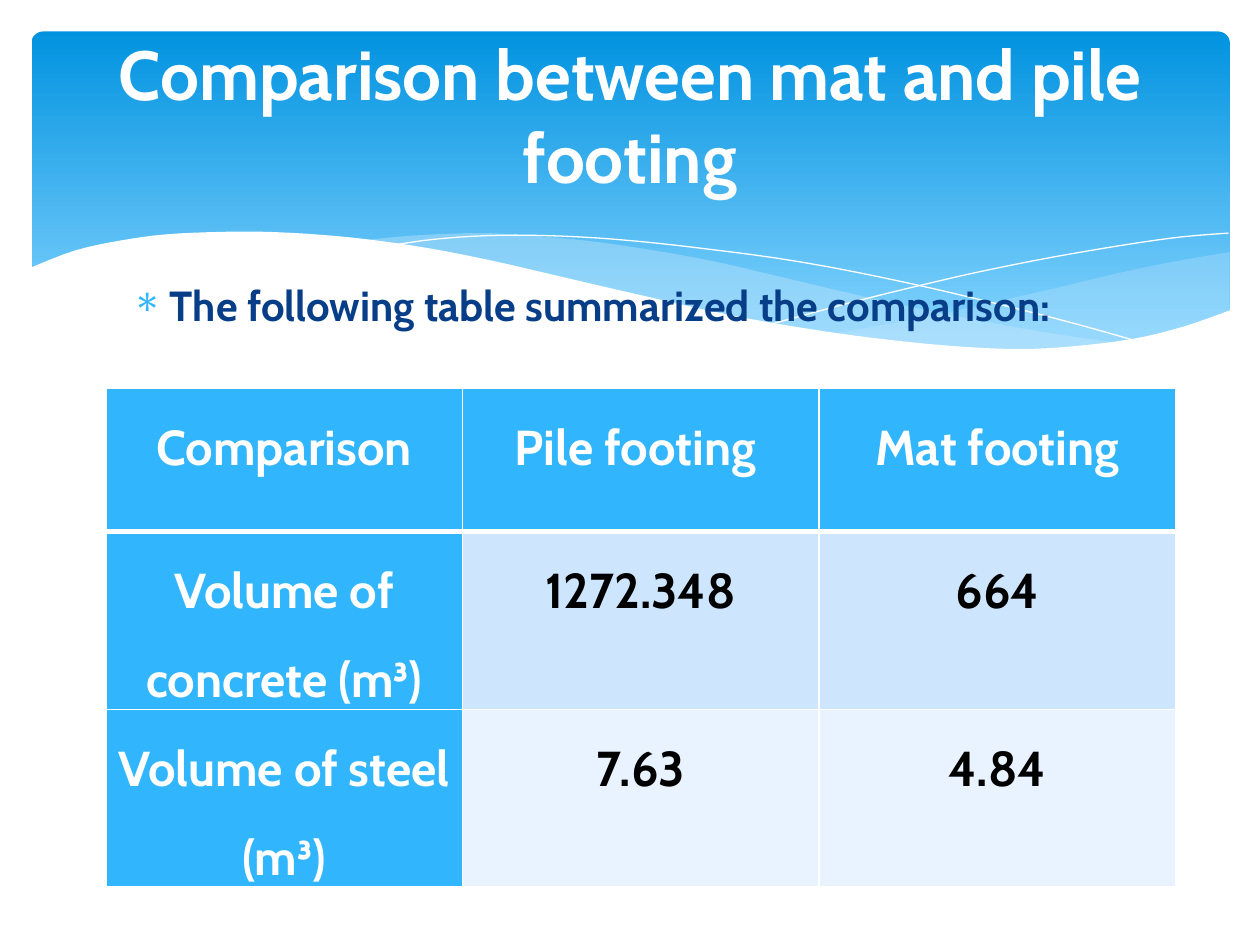
from dataclasses import dataclass

from lxml import etree
from pptx import Presentation
from pptx.dml.color import RGBColor
from pptx.enum.shapes import MSO_SHAPE
from pptx.enum.text import MSO_ANCHOR, PP_ALIGN
from pptx.oxml.ns import qn
from pptx.util import Inches, Pt

ROUNDED = MSO_SHAPE.ROUNDED_RECTANGLE
TOP = MSO_ANCHOR.TOP
LEFT, CENTER = PP_ALIGN.LEFT, PP_ALIGN.CENTER


@dataclass(frozen=True)
class Theme:
    """Colours, font and type sizes of the slide."""
    font: str = "Cabin"
    white: str = "FFFFFF"
    black: str = "000000"
    navy: str = "073E87"
    accent: str = "31B6FD"
    band_top: str = "0293E0"
    band_bottom: str = "83D3FE"
    wave: str = "C6E7FC"
    row_tints: tuple = ("CEE5FE", "E8F3FF")
    title_size: float = 39.6
    body_size: float = 24
    table_size: float = 28


THEME = Theme()

RIGHT_WAVE_TOP = [(9.76, 2), (9.35, 2.07), (8.91, 2.16), (8.32, 2.3),
                  (7.79, 2.42), (7.29, 2.53), (6.61, 2.65)]
RIGHT_WAVE_BOTTOM = [(6.61, 2.65), (7.05, 2.71), (7.57, 2.76), (8.03, 2.78),
                     (8.54, 2.76), (8.97, 2.7), (9.35, 2.62), (9.76, 2.47)]
LONG_WAVE_TOP = [(8.93, 2.73), (8.37, 2.65), (7.75, 2.54), (7.06, 2.4),
                 (6.29, 2.22), (5.69, 2.08), (5.14, 1.98), (4.65, 1.91),
                 (4.2, 1.87), (3.8, 1.85), (3.28, 1.87), (2.86, 1.91)]
LONG_WAVE_BOTTOM = [(2.86, 1.91), (3.42, 1.99), (4.04, 2.11), (4.49, 2.22),
                    (5.3, 2.4), (6.01, 2.55), (6.65, 2.66), (7.22, 2.74),
                    (7.73, 2.77), (8.18, 2.78), (8.57, 2.77), (8.93, 2.73)]
FALLING_LINE = [(3.09, 1.95), (3.44, 1.9), (3.87, 1.87), (4.33, 1.87),
                (4.89, 1.9), (5.56, 1.97), (6.36, 2.08), (7.27, 2.26),
                (8.31, 2.51), (9.07, 2.72)]
RISING_LINE = [(6.13, 2.57), (6.72, 2.41), (7.2, 2.29), (7.76, 2.16),
               (8.36, 2.04), (8.95, 1.94), (9.38, 1.88), (9.75, 1.85)]
WHITE_WAVE_TOP = [(9.77, 2.46), (9.4, 2.59), (8.99, 2.69), (8.5, 2.75),
                  (8.09, 2.77), (7.61, 2.75), (7.08, 2.7), (6.48, 2.62),
                  (5.79, 2.5), (5.03, 2.33), (4.47, 2.2), (3.91, 2.07),
                  (3.4, 1.97), (2.92, 1.9), (2.5, 1.86), (2.11, 1.84),
                  (1.77, 1.84), (1.32, 1.86), (0.95, 1.91), (0.59, 1.99),
                  (0.23, 2.13)]
WHITE_WAVE_BASE = [(0.23, 3.29), (9.77, 3.29)]

TABLE_ROWS = [
    ("Comparison", "Pile footing ", "Mat footing"),
    ("Volume of concrete (m³)", "1272.348", "664"),
    ("Volume of steel (m³)", "7.63", "4.84"),
]
COLUMN_WIDTH = 2.83
ROW_HEIGHTS = (1.14, 1.41, 1.41)


def rgb(color):
    """Turn a hex string into a colour."""
    return RGBColor.from_string(color)


def smooth(points, steps=4):
    """Return a Catmull-Rom curve through the points."""
    padded = [points[0], *points, points[-1]]
    curve = [points[0]]
    for a, b, c, d in zip(padded, padded[1:], padded[2:], padded[3:]):
        for step in range(1, steps + 1):
            t = step / steps
            curve.append(tuple(
                q + t / 2 * (r - p + t * (2 * p - 5 * q + 4 * r - s
                                          + t * (3 * (q - r) + s - p)))
                for p, q, r, s in zip(a, b, c, d)))
    return curve


def add_outline(slide, points, closed):
    """Add a shadowless freeform through points given in inches."""
    start, *rest = [(Inches(x), Inches(y)) for x, y in points]
    builder = slide.shapes.build_freeform(*start)
    builder.add_line_segments(rest, close=closed)
    shape = builder.convert_to_shape()
    shape.shadow.inherit = False
    return shape


def add_wave(slide, points, color, opacity=100):
    """Add a filled wave with an opacity in percent."""
    shape = add_outline(slide, points, True)
    shape.line.fill.background()
    shape.fill.solid()
    shape.fill.fore_color.rgb = rgb(color)
    if opacity < 100:
        color_element = shape.element.spPr.find(qn("a:solidFill"))[0]
        etree.SubElement(color_element, qn("a:alpha"), val=str(opacity * 1000))


def add_hairline(slide, points):
    """Add a thin white curve."""
    shape = add_outline(slide, smooth(points), False)
    shape.fill.background()
    shape.line.color.rgb = rgb(THEME.white)
    shape.line.width = Pt(0)


def add_band(slide):
    """Add the blue gradient band at the top."""
    band = slide.shapes.add_shape(
        ROUNDED, Inches(0.25), Inches(0.25), Inches(9.51), Inches(2.7))
    band.adjustments[0] = 0.034
    band.shadow.inherit = False
    band.line.fill.background()
    band.fill.gradient()
    band.fill.gradient_angle = 270
    stops = ((0, THEME.band_top), (0.9, THEME.band_bottom))
    for stop, (position, color) in zip(band.fill.gradient_stops, stops):
        stop.position = position
        stop.color.rgb = rgb(color)


def write_text(frame, text, *, size, color, align=LEFT, before=0, after=0,
               spacing=None):
    """Write one bold paragraph and return it."""
    frame.word_wrap = True
    frame.vertical_anchor = TOP
    paragraph = frame.paragraphs[0]
    paragraph.alignment = align
    paragraph.space_before, paragraph.space_after = Pt(before), Pt(after)
    paragraph.line_spacing = spacing
    run = paragraph.add_run()
    run.text = text
    run.font.name = THEME.font
    run.font.size = Pt(size)
    run.font.bold = True
    run.font.color.rgb = rgb(color)
    return paragraph


def add_bullet(paragraph, character, color, indent):
    """Give a paragraph a coloured bullet and a hanging indent in inches."""
    properties = paragraph._p.get_or_add_pPr()
    properties.set("marL", str(Inches(indent)))
    properties.set("indent", str(-Inches(indent)))
    bullet_color = etree.SubElement(properties, qn("a:buClr"))
    etree.SubElement(bullet_color, qn("a:srgbClr"), val=color)
    etree.SubElement(properties, qn("a:buChar"), char=character)


def set_borders(cell, color, **widths):
    """Draw cell borders with widths in points by side letter."""
    properties = cell._tc.get_or_add_tcPr()
    for position, (side, width) in enumerate(widths.items()):
        line = etree.Element(qn(f"a:ln{side}"), w=str(Pt(width)))
        fill = etree.SubElement(line, qn("a:solidFill"))
        etree.SubElement(fill, qn("a:srgbClr"), val=color)
        properties.insert(position, line)


def add_comparison_table(slide):
    """Add the table that compares both footings."""
    table = slide.shapes.add_table(
        len(TABLE_ROWS), len(TABLE_ROWS[0]), Inches(0.84), Inches(3.08),
        Inches(COLUMN_WIDTH * 3), Inches(sum(ROW_HEIGHTS))).table
    for column in table.columns:
        column.width = Inches(COLUMN_WIDTH)
    for i, values in enumerate(TABLE_ROWS):
        table.rows[i].height = Inches(ROW_HEIGHTS[i])
        for j, value in enumerate(values):
            cell = table.cell(i, j)
            heading = i == 0 or j == 0
            cell.margin_left = cell.margin_right = Inches(0.07)
            cell.margin_top = cell.margin_bottom = 0
            cell.fill.solid()
            cell.fill.fore_color.rgb = rgb(
                THEME.accent if heading else THEME.row_tints[i - 1])
            set_borders(cell, THEME.white, L=1, R=1,
                        T=3 if i == 1 else 1, B=3 if i == 0 else 1)
            write_text(cell.text_frame, value, size=THEME.table_size,
                       color=THEME.white if heading else THEME.black,
                       align=CENTER, before=12, after=12, spacing=1.5)


def add_text_box(slide, left, top, width, height):
    """Add a text box and return its text frame."""
    return slide.shapes.add_textbox(
        Inches(left), Inches(top), Inches(width), Inches(height)).text_frame


def main():
    """Build and save the slide."""
    presentation = Presentation()
    presentation.slide_width, presentation.slide_height = Inches(10), Inches(7.5)
    slide = presentation.slides.add_slide(presentation.slide_layouts[6])
    add_band(slide)
    add_wave(slide, smooth(RIGHT_WAVE_TOP) + smooth(RIGHT_WAVE_BOTTOM), THEME.wave, 29)
    add_wave(slide, smooth(LONG_WAVE_TOP) + smooth(LONG_WAVE_BOTTOM), THEME.wave, 40)
    add_hairline(slide, FALLING_LINE)
    add_hairline(slide, RISING_LINE)
    add_wave(slide, smooth(WHITE_WAVE_TOP) + WHITE_WAVE_BASE, THEME.white)
    body = write_text(add_text_box(slide, 0.95, 2.17, 8.1, 4.53),
                      "The following table summarized the comparison:",
                      size=THEME.body_size, color=THEME.navy, before=4.8)
    add_bullet(body, "∗", THEME.accent, 0.3)
    title_frame = add_text_box(slide, 0.5, 0.25, 9, 2)
    title_frame.margin_top = 0
    write_text(title_frame, "Comparison between mat and pile footing",
               size=THEME.title_size, color=THEME.white, align=CENTER)
    add_comparison_table(slide)
    presentation.save("out.pptx")


if __name__ == "__main__":
    main()
